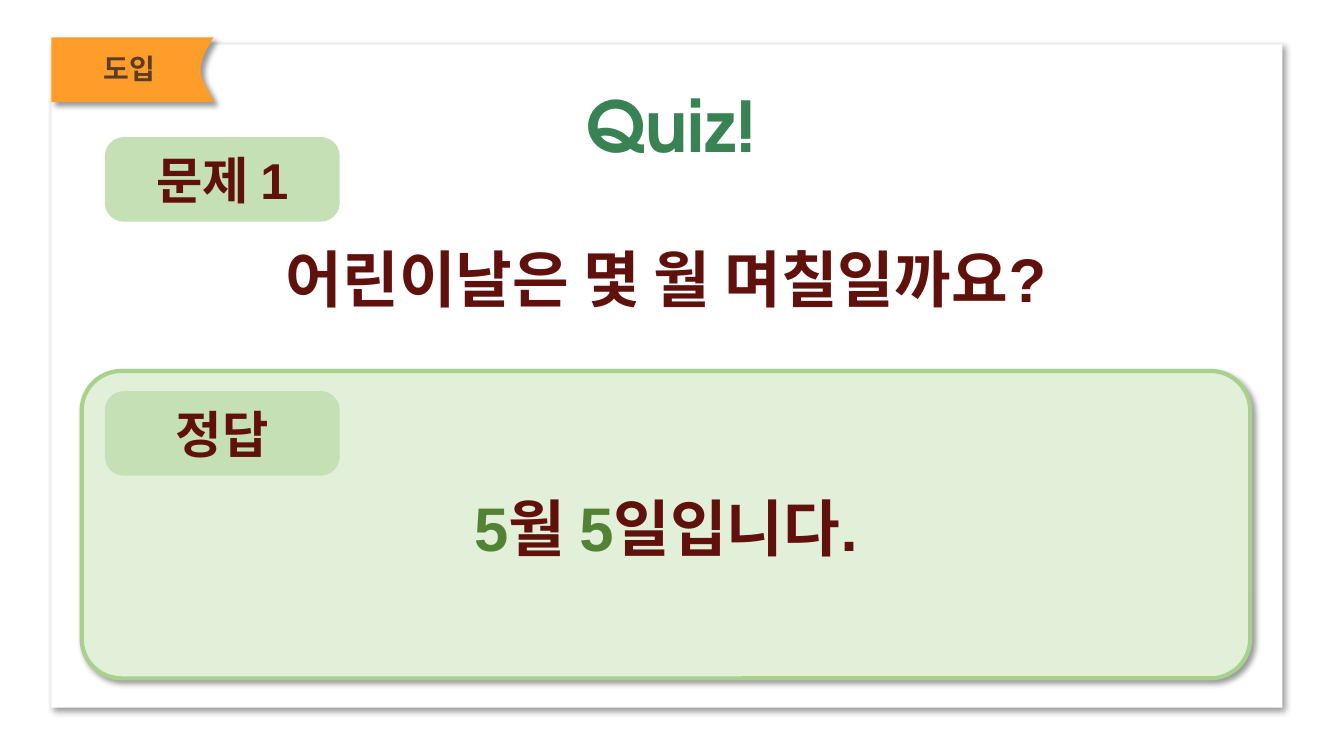
"""Build the Children's Day quiz slide."""
from dataclasses import dataclass

from lxml.etree import SubElement
from pptx import Presentation
from pptx.dml.color import RGBColor
from pptx.enum.shapes import MSO_SHAPE
from pptx.enum.text import MSO_ANCHOR, MSO_AUTO_SIZE, PP_ALIGN
from pptx.oxml.ns import qn
from pptx.util import Pt

PX = 9144


@dataclass(frozen=True)
class Theme:
    paper: str = "FFFFFF"
    ribbon: str = "FE9D2A"
    ribbon_text: str = "5B3D25"
    title: str = "398254"
    badge: str = "C5E0B4"
    panel: str = "E2F0D9"
    panel_edge: str = "A9D18E"
    ink: str = "60110B"
    number: str = "548235"
    title_pt: int = 50
    question_pt: int = 44
    badge_pt: int = 36
    ribbon_pt: int = 20
    display: str = "TeX Gyre Adventor"
    latin: str = "Arial"
    korean: str = "Noto Sans CJK KR"


THEME = Theme()
SLIDE_SIZE = (1333, 750)
CARD = (51, 44, 1221, 658)
RIBBON = (51, 37, 161, 64)
RIBBON_NOTCH = ((212, 37), (187, 75), (204, 79), (212, 101))
NOTCH_STEPS = 24
PANEL = (81, 368, 1159, 305)
BADGE_X, BADGE_W, BADGE_H = 104, 233, 84
BADGE_TOPS = {"question": 136, "answer": 388}
BADGE_TEXT_INSET, BADGE_TEXT_H = 7, 71

TITLE = ("Quiz!", THEME.title)
SECTION = ("도입", THEME.ribbon_text)
QUESTION_LABEL = ("문제 1", THEME.ink)
QUESTION = ("어린이날은 몇 월 며칠일까요?", THEME.ink)
ANSWER_LABEL = ("정답", THEME.ink)
ANSWER = [
    ("5", THEME.number),
    ("월 ", THEME.ink),
    ("5", THEME.number),
    ("일입니다.", THEME.ink),
]


def emu(lengths):
    return [length * PX for length in lengths]


def add_shadow(shape, distance):
    effects = shape._element.spPr.find(qn("a:effectLst"))
    shadow = SubElement(effects, qn("a:outerShdw"), blurRad=str(Pt(4)),
                        dist=str(Pt(distance)), dir="2700000",
                        algn="tl", rotWithShape="0")
    black = SubElement(shadow, qn("a:srgbClr"), val="000000")
    SubElement(black, qn("a:alpha"), val="40000")


def paint(shape, fill, edge=None, shadow=None):
    shape.shadow.inherit = False
    shape.fill.solid()
    shape.fill.fore_color.rgb = RGBColor.from_string(fill)
    if edge:
        shape.line.color.rgb = RGBColor.from_string(edge)
        shape.line.width = Pt(3)
    else:
        shape.line.fill.background()
    if shadow:
        add_shadow(shape, shadow)


def add_block(slide, preset, box, fill, corner=None, **look):
    block = slide.shapes.add_shape(preset, *emu(box))
    if corner:
        block.adjustments[0] = corner
    paint(block, fill, **look)


def notch_point(t):
    weights = ((1 - t) ** 3, 3 * t * (1 - t) ** 2, 3 * t * t * (1 - t), t ** 3)
    return tuple(round(sum(w * point[axis] for w, point in zip(weights, RIBBON_NOTCH)) * PX)
                 for axis in (0, 1))


def add_ribbon(slide):
    left, top, _, height = RIBBON
    outline = slide.shapes.build_freeform(left * PX, top * PX, scale=1.0)
    notch = [notch_point(step / NOTCH_STEPS) for step in range(NOTCH_STEPS + 1)]
    outline.add_line_segments(notch + [(left * PX, (top + height) * PX)], close=True)
    paint(outline.convert_to_shape(), THEME.ribbon, shadow=4)


def add_text(slide, box, pieces, size, font=THEME.latin):
    frame = slide.shapes.add_textbox(*emu(box)).text_frame
    frame.word_wrap = True
    frame.auto_size = MSO_AUTO_SIZE.SHAPE_TO_FIT_TEXT
    line = frame.paragraphs[0]
    line.alignment = PP_ALIGN.CENTER
    for words, color in pieces:
        run = line.add_run()
        run.text = words
        run.font.name = font
        run.font.size = Pt(size)
        run.font.bold = True
        run.font.color.rgb = RGBColor.from_string(color)
        SubElement(run.font._element, qn("a:ea"), typeface=THEME.korean)
    return frame


def add_title(slide):
    frame = add_text(slide, (51, 43, 1221, 120), [TITLE], THEME.title_pt, THEME.display)
    frame.vertical_anchor = MSO_ANCHOR.MIDDLE
    line = frame.paragraphs[0]
    line.line_spacing = 1.5
    indents = line._p.get_or_add_pPr()
    indents.set("marL", str(39 * PX))
    indents.set("indent", str(-30 * PX))


def add_badge(slide, top, label, font=THEME.latin):
    add_block(slide, MSO_SHAPE.ROUNDED_RECTANGLE, (BADGE_X, top, BADGE_W, BADGE_H),
              THEME.badge, corner=0.225)
    add_text(slide, (BADGE_X, top + BADGE_TEXT_INSET, BADGE_W, BADGE_TEXT_H),
             [label], THEME.badge_pt, font)


def main():
    deck = Presentation()
    deck.slide_width, deck.slide_height = emu(SLIDE_SIZE)
    slide = deck.slides.add_slide(deck.slide_layouts[6])
    add_block(slide, MSO_SHAPE.RECTANGLE, CARD, THEME.paper, shadow=3)
    add_ribbon(slide)
    add_title(slide)
    add_text(slide, (55, 46, 147, 44), [SECTION], THEME.ribbon_pt, THEME.korean)
    add_badge(slide, BADGE_TOPS["question"], QUESTION_LABEL)
    add_block(slide, MSO_SHAPE.ROUNDED_RECTANGLE, PANEL, THEME.panel,
              corner=0.129, edge=THEME.panel_edge, shadow=3)
    add_text(slide, (23, 234, 1275, 84), [QUESTION], THEME.question_pt)
    add_badge(slide, BADGE_TOPS["answer"], ANSWER_LABEL, THEME.korean)
    add_text(slide, (81, 481, 1159, 84), ANSWER, THEME.question_pt)
    deck.save("out.pptx")


if __name__ == "__main__":
    main()
